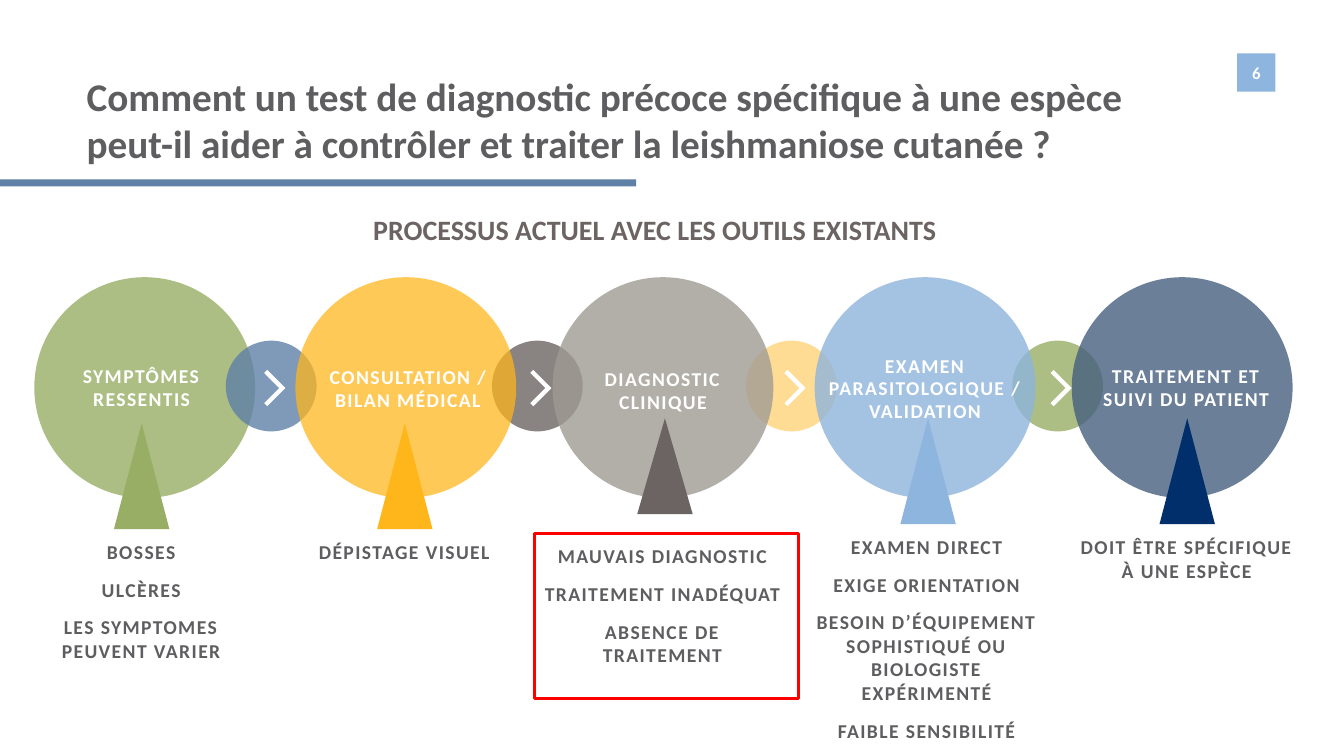
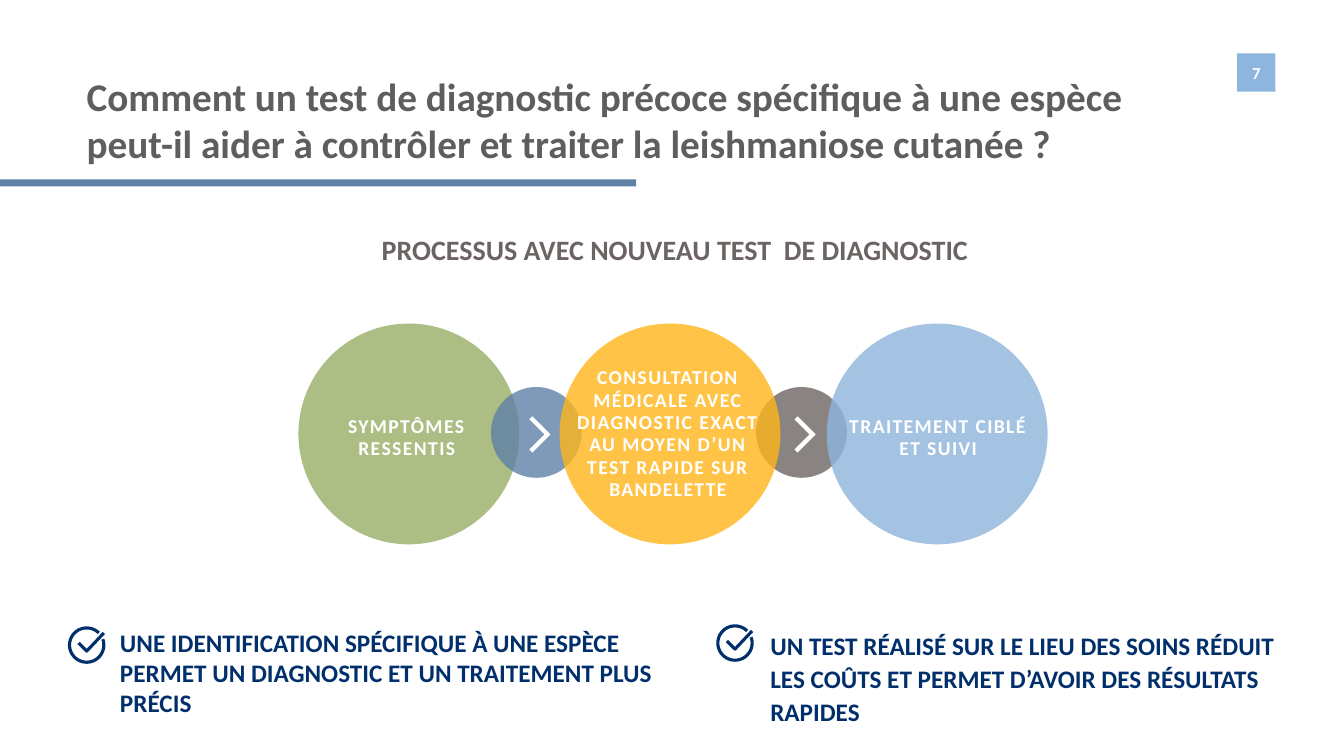
"""Build two slides on the diagnosis process for cutaneous leishmaniasis."""
from dataclasses import dataclass
from math import cos, radians, sin
from typing import Iterator, Optional

from lxml.etree import SubElement
from pptx import Presentation
from pptx.dml.color import RGBColor
from pptx.enum.shapes import MSO_SHAPE as Shp
from pptx.enum.text import MSO_ANCHOR as Anchor, MSO_AUTO_SIZE as AutoSize, PP_ALIGN as Align
from pptx.oxml.ns import qn
from pptx.util import Inches, Pt

GREEN, AMBER, SAND = "98AE65", "FFB61A", "FFD478"
SKY, STEEL, SLATE, NAVY = "8EB5DD", "5F80A7", "46607F", "002F6C"
STONE, TAUPE, GREY = "9F9B93", "6C6463", "5E5D60"
WHITE, RED = "FFFFFF", "FF0000"

TITLE = ("Comment un test de diagnostic précoce spécifique à une espèce "
         "peut-il aider à contrôler et traiter la leishmaniose cutanée ?")
CIRCLE, DOT = 2.19, 0.9
CHEVRON = ((0.03, 0), (0.21, 0.18), (0.03, 0.36), (0, 0.33), (0.15, 0.18), (0, 0.03))
TICK = ((0.09, 0.15), (0.17, 0.23), (0.34, 0.05))
ARC = tuple((0.17 + 0.17 * cos(radians(a)), 0.17 + 0.17 * sin(radians(a)))
            for a in range(-20, 316, 5))

Box = tuple[float, float, float, float]


@dataclass(frozen=True)
class Style:
    """Text format of one role."""
    size: float
    color: str
    align: Align = Align.CENTER
    after: float = 0
    lines: float = 1.0
    spc: int = 0


@dataclass(frozen=True)
class Stage:
    """Large circle of the process with its label box."""
    x: float
    color: str
    label: str
    text_x: float
    text_y: float
    text_w: float = 2.05
    alpha: int = 80


@dataclass(frozen=True)
class Dot:
    """Small chevron circle between two stages."""
    x: float
    color: str


@dataclass(frozen=True)
class Callout:
    """Triangle with the remarks below it."""
    x: float
    y: float
    h: float
    color: str
    text: str
    box: Box


@dataclass(frozen=True)
class Benefit:
    """Ticked statement."""
    icon: tuple[float, float]
    text: str
    box: Box
    lines: float = 1.0


TITLE_STYLE = Style(28, GREY, Align.LEFT)
HEADING = Style(20, TAUPE, after=4)
LABEL = Style(14, WHITE, lines=0.95, spc=100)
REMARK = Style(14, GREY, after=10, spc=100)
NUMBER = Style(12, WHITE)

CURRENT_STAGES = (
    Stage(0.34, GREEN, "SYMPTÔMES RESSENTIS", 0.38, 3.58),
    Stage(2.93, AMBER, "CONSULTATION /\nBILAN MÉDICAL", 3.02, 3.59, alpha=73),
    Stage(5.48, STONE, "DIAGNOSTIC CLINIQUE", 5.55, 3.61),
    Stage(8.08, SKY, "EXAMEN PARASITOLOGIQUE / VALIDATION", 8.08, 3.48, CIRCLE),
    Stage(10.63, SLATE, "TRAITEMENT ET SUIVI DU PATIENT", 10.74, 3.58),
)
CURRENT_DOTS = (Dot(2.24, STEEL), Dot(4.88, TAUPE), Dot(7.4, SAND), Dot(10.04, GREEN))
CALLOUTS = (
    Callout(1.13, 4.2, 1.05, GREEN, "BOSSES\nULCÈRES\nLES SYMPTOMES PEUVENT VARIER",
            (0.17, 5.31, 2.46, 1.32)),
    Callout(3.74, 4.2, 1.05, AMBER, "DÉPISTAGE VISUEL", (2.78, 5.31, 2.46, 0.34)),
    Callout(6.32, 4.15, 0.95, TAUPE,
            "MAUVAIS DIAGNOSTIC\nTRAITEMENT INADÉQUAT\nABSENCE DE TRAITEMENT",
            (5.28, 5.35, 2.58, 1.94)),
    Callout(8.93, 4.15, 1.05, SKY,
            "EXAMEN DIRECT\nEXIGE ORIENTATION\nBESOIN D’ÉQUIPEMENT SOPHISTIQUÉ OU "
            "BIOLOGISTE EXPÉRIMENTÉ\nFAIBLE SENSIBILITÉ",
            (7.88, 5.26, 2.62, 2.17)),
    Callout(11.5, 4.15, 1.05, NAVY, "DOIT ÊTRE SPÉCIFIQUE À UNE ESPÈCE",
            (10.54, 5.26, 2.46, 0.57)),
)
NEW_STAGES = (
    Stage(2.96, GREEN, "SYMPTÔMES RESSENTIS", 3.01, 4.07),
    Stage(5.55, AMBER, "CONSULTATION MÉDICALE AVEC DIAGNOSTIC EXACT AU MOYEN D’UN "
          "TEST RAPIDE SUR BANDELETTE", 5.6, 3.59),
    Stage(8.2, SKY, "TRAITEMENT CIBLÉ ET SUIVI", 8.28, 4.07),
)
NEW_DOTS = (Dot(4.87, STEEL), Dot(7.5, TAUPE))
BENEFITS = (
    Benefit((0.69, 6.23), "UNE IDENTIFICATION SPÉCIFIQUE À UNE ESPÈCE PERMET UN DIAGNOSTIC "
            "ET UN TRAITEMENT PLUS PRÉCIS", (1.09, 6.17, 5.65, 1.01)),
    Benefit((7.12, 6.21), "UN TEST RÉALISÉ SUR LE LIEU DES SOINS RÉDUIT LES COÛTS ET PERMET "
            "D’AVOIR DES RÉSULTATS RAPIDES", (7.54, 6.17, 5.37, 1.08), 1.1),
)


def rgb(color: str) -> RGBColor:
    """Turn a hex string into a colour."""
    return RGBColor.from_string(color)


def paint(sp, fill: Optional[str] = None, line: Optional[str] = None,
          width: float = 1, alpha: int = 100) -> None:
    """Set fill, opacity and outline, without shadow."""
    sp.shadow.inherit = False
    if fill:
        sp.fill.solid()
        sp.fill.fore_color.rgb = rgb(fill)
        if alpha < 100:
            clr = sp.element.spPr.find(f".//{qn('a:srgbClr')}")
            SubElement(clr, qn("a:alpha"), val=str(alpha * 1000))
    else:
        sp.fill.background()
    if line:
        sp.line.color.rgb = rgb(line)
        sp.line.width = Pt(width)
    else:
        sp.line.fill.background()


def add_shape(s, kind: Shp, box: Box, fill: Optional[str] = None, **look):
    """Add a painted preset shape."""
    sp = s.shapes.add_shape(kind, *map(Inches, box))
    paint(sp, fill, **look)
    return sp


def add_outline(s, x: float, y: float, *paths, close: bool = False):
    """Add a freeform from paths given relative to x, y."""
    moved = [[(Inches(x + dx), Inches(y + dy)) for dx, dy in pts] for pts in paths]
    fb = s.shapes.build_freeform(*moved[0][0])
    for i, pts in enumerate(moved):
        if i:
            fb.move_to(*pts[0])
        fb.add_line_segments(pts[1:], close=close)
    return fb.convert_to_shape()


def write(sp, text: str, style: Style, anchor: Anchor = Anchor.TOP, wrap: bool = True) -> None:
    """Write one formatted paragraph for each line of text."""
    tf = sp.text_frame
    frame = {"word_wrap": wrap, "auto_size": AutoSize.NONE, "vertical_anchor": anchor}
    para = {"alignment": style.align, "space_before": Pt(0),
            "space_after": Pt(style.after), "line_spacing": style.lines}
    font = {"name": "Calibri", "size": Pt(style.size), "bold": True}
    for key, value in frame.items():
        setattr(tf, key, value)
    for i, line in enumerate(text.split("\n")):
        p = tf.add_paragraph() if i else tf.paragraphs[0]
        for key, value in para.items():
            setattr(p, key, value)
        pPr = p._p.get_or_add_pPr()
        pPr.set("marL", "0")
        pPr.set("indent", "0")
        SubElement(pPr, qn("a:buNone"))
        r = p.add_run()
        r.text = line
        for key, value in font.items():
            setattr(r.font, key, value)
        r.font.color.rgb = rgb(style.color)
        if style.spc:
            r._r.get_or_add_rPr().set("spc", str(style.spc))


def add_text(s, box: Box, text: str, style: Style) -> None:
    """Add a text box."""
    write(s.shapes.add_textbox(*map(Inches, box)), text, style)


def fill_holder(ph, box: Box, text: str, style: Style) -> None:
    """Move a placeholder and write into it."""
    for key, value in zip(("left", "top", "width", "height"), box):
        setattr(ph, key, Inches(value))
    write(ph, text, style)


def add_base(prs, number: int, heading: str, box: Box) -> tuple:
    """Add a slide with title, band, number and heading; return it and its free bodies."""
    s = prs.slides.add_slide(prs.slide_layouts.get_by_name("Comparison"))
    bodies = iter([ph for ph in s.placeholders if ph.placeholder_format.idx])
    badge = add_shape(s, Shp.RECTANGLE, (12.27, 0.53, 0.38, 0.38), SKY)
    write(badge, str(number), NUMBER, Anchor.MIDDLE, wrap=False)
    add_shape(s, Shp.RECTANGLE, (0, 1.78, 6.31, 0.07), STEEL)
    fill_holder(s.shapes.title, (0.76, 0.67, 11, 1.04), TITLE, TITLE_STYLE)
    fill_holder(next(bodies), box, heading, HEADING)
    return s, bodies


def add_stage(s, stage: Stage, top: float) -> None:
    """Draw a large circle and its label."""
    add_shape(s, Shp.OVAL, (stage.x, top, CIRCLE, CIRCLE), stage.color, alpha=stage.alpha)
    add_text(s, (stage.text_x, stage.text_y, stage.text_w, 0.55), stage.label, LABEL)


def add_process(s, stages: tuple[Stage, ...], dots: tuple[Dot, ...], top: float) -> None:
    """Draw the first stage, the chevron dots, then the other stages."""
    add_stage(s, stages[0], top)
    for dot in dots:
        add_shape(s, Shp.OVAL, (dot.x, top + 0.63, DOT, DOT), dot.color, alpha=80)
        paint(add_outline(s, dot.x + 0.38, top + 0.92, CHEVRON, close=True), WHITE)
    for stage in stages[1:]:
        add_stage(s, stage, top)


def add_callout(s, c: Callout, bodies: Iterator) -> None:
    """Draw a triangle and its remarks, lists going into body placeholders."""
    add_shape(s, Shp.ISOSCELES_TRIANGLE, (c.x, c.y, 0.55, c.h), c.color)
    if "\n" in c.text:
        fill_holder(next(bodies), c.box, c.text, REMARK)
    else:
        add_text(s, c.box, c.text, REMARK)


def add_benefit(s, b: Benefit, bodies: Iterator) -> None:
    """Draw a tick in a ring beside its statement."""
    paint(add_outline(s, *b.icon, ARC, TICK), line=NAVY, width=2.25)
    fill_holder(next(bodies), b.box, b.text, Style(18, NAVY, Align.LEFT, lines=b.lines))


def main() -> None:
    """Build and save the presentation."""
    prs = Presentation()
    prs.slide_width, prs.slide_height = Inches(13.33), Inches(7.5)

    s, bodies = add_base(prs, 6, "PROCESSUS ACTUEL AVEC LES OUTILS EXISTANTS",
                         (1.36, 2.06, 10.27, 0.44))
    add_process(s, CURRENT_STAGES, CURRENT_DOTS, 2.75)
    for callout in CALLOUTS:
        add_callout(s, callout, bodies)
    add_shape(s, Shp.RECTANGLE, (5.3, 5.29, 2.62, 1.64), line=RED, width=2.25)

    s, bodies = add_base(prs, 7, "PROCESSUS AVEC NOUVEAU TEST  DE DIAGNOSTIC",
                         (1.75, 2.26, 9.89, 0.44))
    add_process(s, NEW_STAGES, NEW_DOTS, 3.21)
    for benefit in BENEFITS:
        add_benefit(s, benefit, bodies)
    for ph in bodies:
        ph.element.getparent().remove(ph.element)

    prs.save("out.pptx")


if __name__ == "__main__":
    main()
